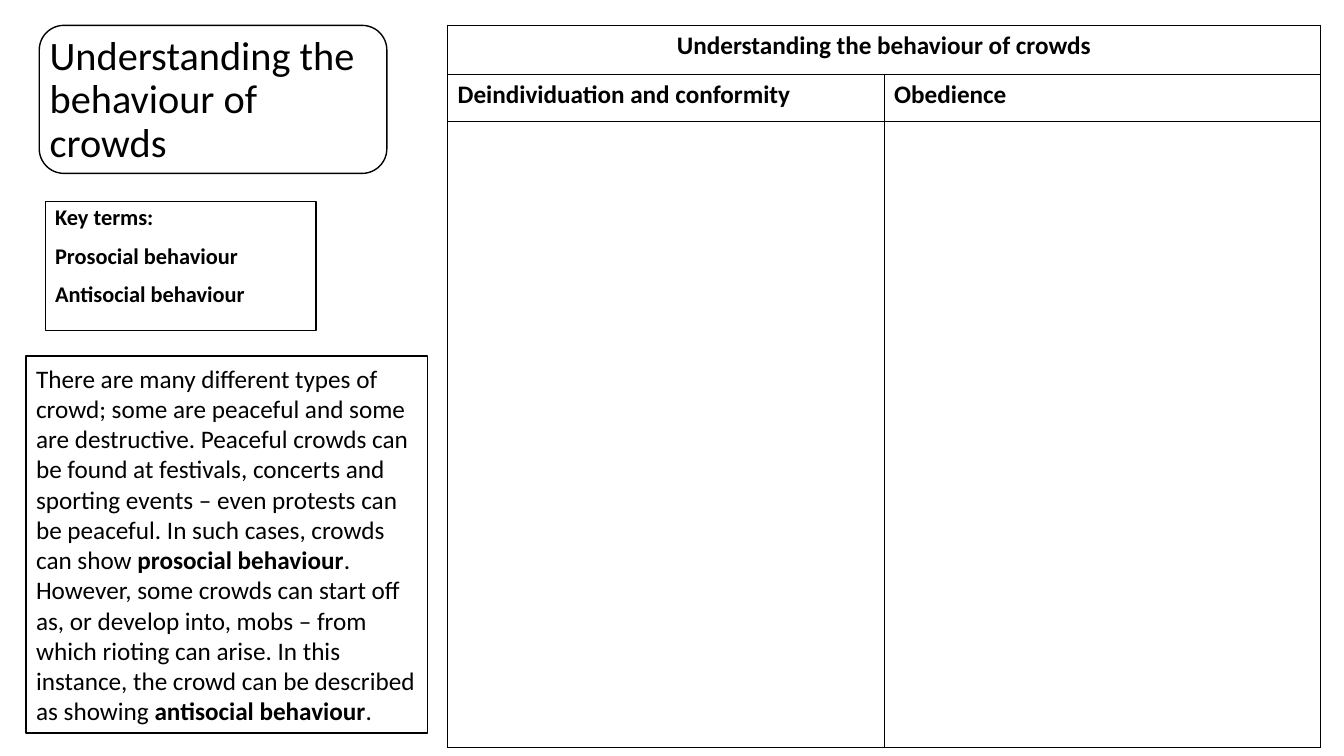
from lxml import etree
from pptx import Presentation
from pptx.dml.color import RGBColor
from pptx.enum.shapes import MSO_SHAPE
from pptx.enum.text import MSO_ANCHOR, PP_ALIGN
from pptx.oxml.ns import qn
from pptx.util import Cm, Pt

RECTANGLE = MSO_SHAPE.RECTANGLE
ROUNDED = MSO_SHAPE.ROUNDED_RECTANGLE
TOP, MIDDLE, BOTTOM = MSO_ANCHOR.TOP, MSO_ANCHOR.MIDDLE, MSO_ANCHOR.BOTTOM
LEFT, CENTER = PP_ALIGN.LEFT, PP_ALIGN.CENTER

FONT = "Calibri"
COLORS = {"ink": "000000"}
TITLE = "Understanding the behaviour of crowds"
KEY_TERMS = ["Key terms:", "Prosocial behaviour", "Antisocial behaviour"]
CROWD_TYPES = [
    ("There are many different types of crowd; some are peaceful and some are "
     "destructive. Peaceful crowds can be found at festivals, concerts and sporting "
     "events – even protests can be peaceful. In such cases, crowds can show ", False),
    ("prosocial behaviour", True),
    (". However, some crowds can start off as, or develop into, mobs – from which "
     "rioting can arise. In this instance, the crowd can be described as showing ", False),
    ("antisocial behaviour", True),
    (".", False),
]
COLUMN_HEADINGS = ["Deindividuation and conformity", "Obedience"]
ROW_HEIGHTS = [1.24, 1.19, 15.77]
COLUMN_WIDTH = 11


def add_runs(paragraph, runs, size, align=LEFT):
    paragraph.alignment = align
    for text, bold in runs:
        run = paragraph.add_run()
        run.text = text
        run.font.name = FONT
        run.font.size = Pt(size)
        run.font.bold = bold
        run.font.color.rgb = RGBColor.from_string(COLORS["ink"])


def add_box(slide, kind, left, top, width, height, anchor):
    shape = slide.shapes.add_shape(kind, Cm(left), Cm(top), Cm(width), Cm(height))
    shape.shadow.inherit = False
    shape.fill.background()
    shape.line.color.rgb = RGBColor.from_string(COLORS["ink"])
    shape.line.width = Pt(1)
    text_frame = shape.text_frame
    text_frame.word_wrap = True
    text_frame.vertical_anchor = anchor
    return text_frame


def add_title(slide):
    text_frame = add_box(slide, ROUNDED, 0.99, 0.64, 8.76, 3.73, BOTTOM)
    text_frame.margin_left = text_frame.margin_right = Cm(0.08)
    text_frame.margin_top = text_frame.margin_bottom = Cm(0)
    paragraph = text_frame.paragraphs[0]
    paragraph.line_spacing = 0.9
    add_runs(paragraph, [(TITLE, False)], 28.8)


def add_key_terms(slide):
    text_frame = add_box(slide, RECTANGLE, 1.14, 5.08, 6.83, 3.25, TOP)
    for index, term in enumerate(KEY_TERMS):
        paragraph = text_frame.add_paragraph() if index else text_frame.paragraphs[0]
        paragraph.line_spacing = 0.9
        paragraph.space_before = Pt(10 if index else 0)
        add_runs(paragraph, [(term, True)], 16)


def add_crowd_types(slide):
    text_frame = add_box(slide, RECTANGLE, 0.66, 8.97, 10.11, 9.5, MIDDLE)
    add_runs(text_frame.paragraphs[0], CROWD_TYPES, 18)


def style_cell(cell):
    properties = cell._tc.get_or_add_tcPr()
    for side in ("a:lnL", "a:lnR", "a:lnT", "a:lnB"):
        line = etree.SubElement(properties, qn(side), w=str(Pt(1)))
        fill = etree.SubElement(line, qn("a:solidFill"))
        etree.SubElement(fill, qn("a:srgbClr"), val=COLORS["ink"])
    cell.fill.background()


def add_behaviour_table(slide):
    columns = len(COLUMN_HEADINGS)
    frame = slide.shapes.add_table(
        len(ROW_HEIGHTS), columns, Cm(11.28), Cm(0.64),
        Cm(COLUMN_WIDTH * columns), Cm(sum(ROW_HEIGHTS)))
    table = frame.table
    table.first_row = False
    table.horz_banding = False
    for column in table.columns:
        column.width = Cm(COLUMN_WIDTH)
    for row, height in zip(table.rows, ROW_HEIGHTS):
        row.height = Cm(height)
    for cell in table.iter_cells():
        style_cell(cell)
    heading = table.cell(0, 0)
    heading.merge(table.cell(0, columns - 1))
    add_runs(heading.text_frame.paragraphs[0], [(TITLE, True)], 18, CENTER)
    for index, text in enumerate(COLUMN_HEADINGS):
        add_runs(table.cell(1, index).text_frame.paragraphs[0], [(text, True)], 18)


def main():
    presentation = Presentation()
    presentation.slide_width = Cm(33.87)
    presentation.slide_height = Cm(19.05)
    slide = presentation.slides.add_slide(presentation.slide_layouts[6])
    add_title(slide)
    add_behaviour_table(slide)
    add_key_terms(slide)
    add_crowd_types(slide)
    presentation.save("out.pptx")


if __name__ == "__main__":
    main()
